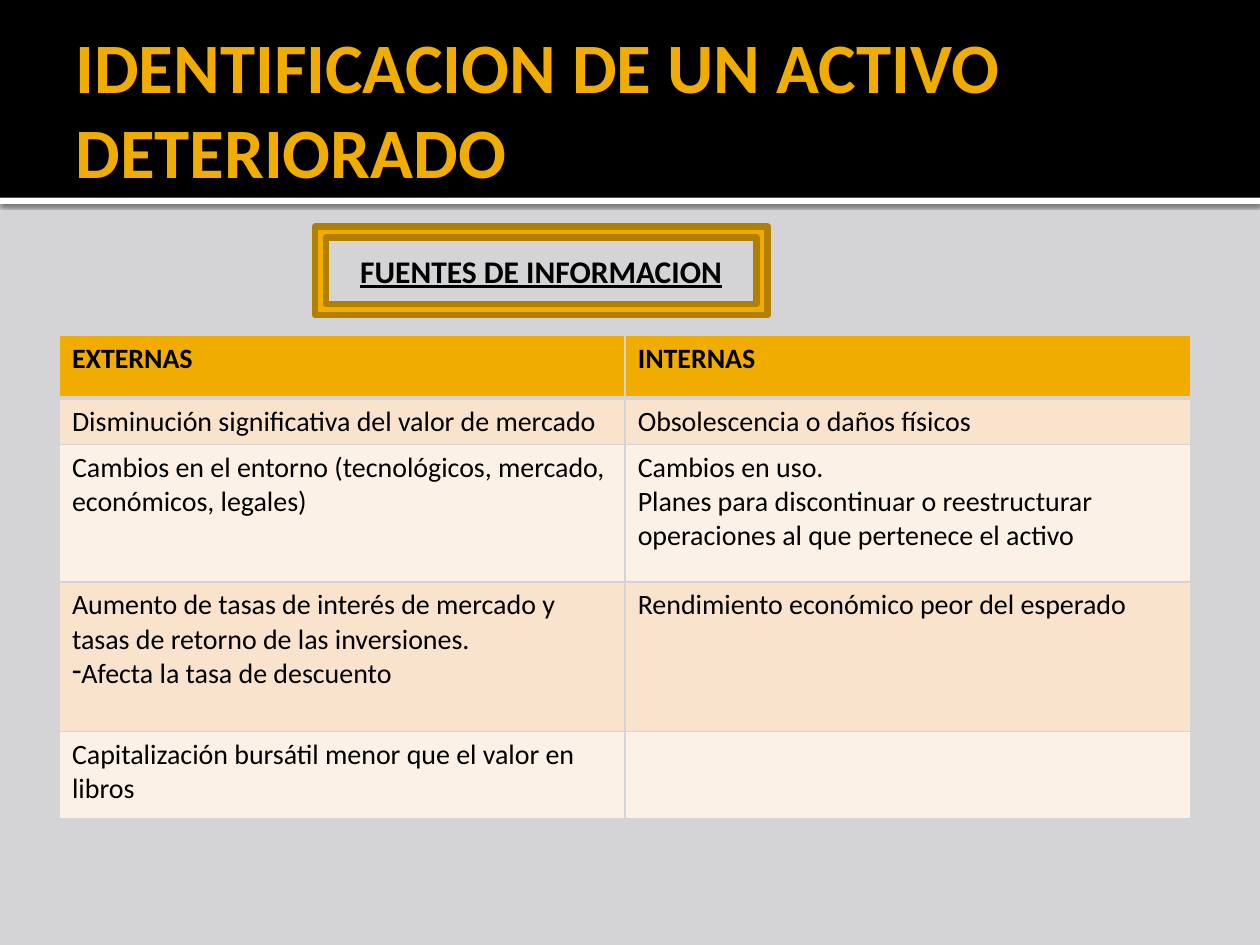
from lxml import etree
from pptx import Presentation
from pptx.dml.color import RGBColor
from pptx.enum.shapes import MSO_SHAPE
from pptx.enum.text import MSO_ANCHOR, PP_ALIGN
from pptx.oxml.ns import qn
from pptx.util import Pt

RECTANGLE, FRAME = MSO_SHAPE.RECTANGLE, MSO_SHAPE.FRAME
MIDDLE = MSO_ANCHOR.MIDDLE
LEFT, CENTER = PP_ALIGN.LEFT, PP_ALIGN.CENTER

COLORS = {
    "background": "D4D4D6",
    "gold": "F0AD00",
    "dark_gold": "B28000",
    "black": "000000",
    "white": "FFFFFF",
    "band": "F9E3CC",
    "light_band": "FCF1E7",
}

COLUMN_WIDTH = 323.3
ROW_HEIGHTS = [36, 26.5, 78.5, 85.5, 50]
SOURCES = [
    ("EXTERNAS", "INTERNAS"),
    ("Disminución significativa del valor de mercado", "Obsolescencia o daños físicos"),
    ("Cambios en el entorno (tecnológicos, mercado, económicos, legales)",
     "Cambios en uso.\nPlanes para discontinuar o reestructurar operaciones "
     "al que pertenece el activo"),
    ("Aumento de tasas de interés de mercado y tasas de retorno de las inversiones.\n"
     "-Afecta la tasa de descuento", "Rendimiento económico peor del esperado"),
    ("Capitalización bursátil menor que el valor en libros", ""),
]


def color(name):
    return RGBColor.from_string(COLORS[name])


def add_element(parent, tag, **attributes):
    return etree.SubElement(parent, qn(tag), attributes)


class SlideBuilder:
    font = "Calibri"

    def __init__(self, slide):
        self.slide = slide
        slide.background.fill.solid()
        slide.background.fill.fore_color.rgb = color("background")

    def add_text(self, text_frame, text, size, ink="black", align=LEFT, **formats):
        """Fill a text frame, one paragraph per line; a leading dash is a bullet."""
        text_frame.word_wrap = True
        for index, line in enumerate(text.split("\n")):
            paragraph = text_frame.paragraphs[0] if index == 0 else text_frame.add_paragraph()
            paragraph.alignment = align
            if line.startswith("-"):
                properties = paragraph._p.get_or_add_pPr()
                properties.set("marL", "0")
                properties.set("indent", "0")
                add_element(properties, "a:buChar", char="-")
                line = line[1:]
            run = paragraph.add_run()
            run.text = line
            for name, value in {"name": self.font, "size": Pt(size), **formats}.items():
                setattr(run.font, name, value)
            run.font.color.rgb = color(ink)

    def shape(self, kind, box, fill, line=None, line_width=0):
        shape = self.slide.shapes.add_shape(kind, *map(Pt, box))
        shape.shadow.inherit = False
        shape.fill.solid()
        shape.fill.fore_color.rgb = color(fill)
        if line:
            shape.line.color.rgb = color(line)
            shape.line.width = Pt(line_width)
            add_element(shape.line._get_or_add_ln(), "a:round")
        else:
            shape.line.fill.background()
        return shape

    def drop_shadow(self, shape, blur, distance):
        effects = shape._element.spPr.find(qn("a:effectLst"))
        shadow = add_element(effects, "a:outerShdw", blurRad=str(Pt(blur)),
                             dist=str(Pt(distance)), dir="5400000", rotWithShape="0")
        shade = add_element(shadow, "a:srgbClr", val=COLORS["black"])
        add_element(shade, "a:alpha", val="60000")

    def title(self, box, text):
        text_frame = self.slide.shapes.add_textbox(*map(Pt, box)).text_frame
        layout = {"vertical_anchor": MIDDLE, "margin_left": Pt(7.2), "margin_right": Pt(3.6)}
        for name, value in layout.items():
            setattr(text_frame, name, value)
        self.add_text(text_frame, text, 40.5, "gold", bold=True)

    def cell_borders(self, cell, bottom_width):
        properties = cell._tc.get_or_add_tcPr()
        widths = {"a:lnL": 1, "a:lnR": 1, "a:lnT": 1, "a:lnB": bottom_width}
        for index, (tag, width) in enumerate(widths.items()):
            border = etree.Element(qn(tag), w=str(Pt(width)))
            fill = add_element(border, "a:solidFill")
            add_element(fill, "a:srgbClr", val=COLORS["background"])
            properties.insert(index, border)

    def table(self, left, top, rows, heights, column_width):
        columns = len(rows[0])
        table = self.slide.shapes.add_table(
            len(rows), columns, Pt(left), Pt(top),
            Pt(column_width * columns), Pt(sum(heights))).table
        for column in table.columns:
            column.width = Pt(column_width)
        for row_index, (texts, height) in enumerate(zip(rows, heights)):
            table.rows[row_index].height = Pt(height)
            header = row_index == 0
            fill = "gold" if header else ("light_band", "band")[row_index % 2]
            for column_index, text in enumerate(texts):
                cell = table.cell(row_index, column_index)
                cell.fill.solid()
                cell.fill.fore_color.rgb = color(fill)
                self.cell_borders(cell, 3 if header else 1)
                self.add_text(cell.text_frame, text, 16, bold=header)


def main():
    presentation = Presentation()
    presentation.slide_width, presentation.slide_height = Pt(720), Pt(540)
    builder = SlideBuilder(presentation.slides.add_slide(presentation.slide_layouts[6]))

    # Title band with a white, shadowed edge
    edge = builder.shape(RECTANGLE, (0, 113, 720, 3.6), "white")
    builder.drop_shadow(edge, 2.5, 0.8)
    builder.shape(RECTANGLE, (0, 0, 720, 113), "black")
    builder.title((36, 12.2, 648, 98.6), "IDENTIFICACION DE UN ACTIVO DETERIORADO")

    # Framed heading
    heading = builder.shape(FRAME, (180, 129.6, 258.5, 50.4), "gold", "dark_gold", 3.78)
    heading.text_frame.vertical_anchor = MIDDLE
    builder.add_text(heading.text_frame, "FUENTES DE INFORMACION", 18, align=CENTER,
                     bold=True, underline=True)

    # Sources of information
    builder.table(34, 191.5, SOURCES, ROW_HEIGHTS, COLUMN_WIDTH)

    presentation.save("out.pptx")


if __name__ == "__main__":
    main()
